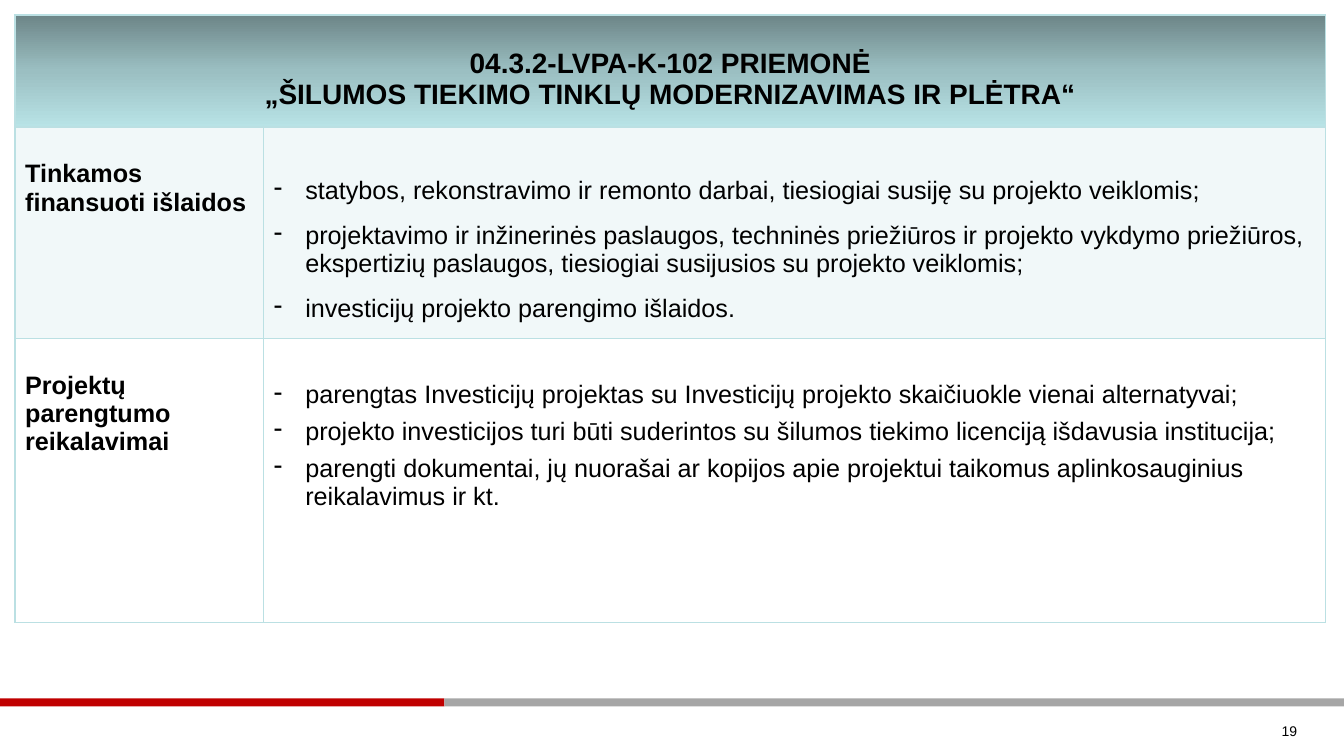
import pptx
import pptx.dml.color
import pptx.enum.shapes
import pptx.enum.text
import pptx.oxml
import pptx.oxml.ns
import pptx.util
from lxml import etree

Cm, Pt = pptx.util.Cm, pptx.util.Pt
RGB = pptx.dml.color.RGBColor.from_string
ALIGN = pptx.enum.text.PP_ALIGN
qn = pptx.oxml.ns.qn

COLORS = {
    "text": "000000",
    "accent": "BBE0E3",
    "red": "C00000",
    "grey": "A6A6A6",
}
HEADER_STOPS = [(0, "6D8688"), (50, "9BBFC2"), (100, "B8E3E6")]

HEADER = ["04.3.2-LVPA-K-102 PRIEMONĖ",
          "„ŠILUMOS TIEKIMO TINKLŲ MODERNIZAVIMAS IR PLĖTRA“"]
# label, items, top margin of the items (cm), gap between items (pt)
SECTIONS = [
    ("Tinkamos finansuoti išlaidos", [
        "statybos, rekonstravimo ir remonto darbai, tiesiogiai susiję su projekto veiklomis;",
        "projektavimo ir inžinerinės paslaugos, techninės priežiūros ir projekto vykdymo "
        "priežiūros, ekspertizių paslaugos, tiesiogiai susijusios su projekto veiklomis;",
        "investicijų projekto parengimo išlaidos.",
    ], 1.25, 12),
    ("Projektų parengtumo reikalavimai", [
        "parengtas Investicijų projektas su Investicijų projekto skaičiuokle vienai alternatyvai;",
        "projekto investicijos turi būti suderintos su šilumos tiekimo licenciją išdavusia "
        "institucija;",
        "parengti dokumentai, jų nuorašai ar kopijos apie projektui taikomus aplinkosauginius "
        "reikalavimus ir kt.",
    ], 1.07, 6),
]


def write(tf, lines, size, bold=False, align=ALIGN.LEFT, gap=0, dash=False):
    """Fill a text frame with one paragraph per line, dashed if asked."""
    tf.text = "\n".join(lines)
    for i, p in enumerate(tf.paragraphs):
        if dash:
            pPr = p._p.get_or_add_pPr()
            pPr.set("marL", str(Cm(0.79)))
            pPr.set("indent", str(-Cm(0.79)))
            etree.SubElement(pPr, qn("a:buChar"), char="-")
        p.alignment = align
        if i and gap:
            p.space_before = Pt(gap)
        for r in p.runs:
            r.font.name = "Arial"
            r.font.size = Pt(size)
            r.font.bold = bold
            r.font.color.rgb = RGB(COLORS["text"])


def add_borders(cell, bottom=1):
    tcPr = cell._tc.get_or_add_tcPr()
    for side, width in (("L", 1), ("R", 1), ("T", 1), ("B", bottom)):
        ln = etree.SubElement(tcPr, qn(f"a:ln{side}"), w=str(Pt(width)))
        fill = etree.SubElement(ln, qn("a:solidFill"))
        etree.SubElement(fill, qn("a:srgbClr"), val=COLORS["accent"])


prs = pptx.Presentation()
prs.slide_width, prs.slide_height = Cm(33.87), Cm(19.05)
s = prs.slides.add_slide(prs.slide_layouts[6])

# Footer bars and page number
for left, width, color in ((0, 11.2, "red"), (11.2, 22.67, "grey")):
    sp = s.shapes.add_shape(pptx.enum.shapes.MSO_SHAPE.RECTANGLE,
                            Cm(left), Cm(17.6), Cm(width), Cm(0.2))
    sp.shadow.inherit = False
    sp.fill.solid()
    sp.fill.fore_color.rgb = RGB(COLORS[color])
    sp.line.fill.background()

tf = s.shapes.add_textbox(Cm(25.04), Cm(17.81), Cm(7.9), Cm(1.24)).text_frame
tf.word_wrap = True
tf.vertical_anchor = pptx.enum.text.MSO_ANCHOR.MIDDLE
write(tf, ["19"], 10, align=ALIGN.RIGHT)

# Table
table = s.shapes.add_table(3, 2, Cm(0.38), Cm(0.38), Cm(33.02), Cm(15.31)).table
table.first_row = table.horz_banding = False
for column, width in zip(table.columns, (6.27, 26.75)):
    column.width = Cm(width)
for row, height in zip(table.rows, (2.82, 5.33, 7.16)):
    row.height = Cm(height)

# Header row
header = table.cell(0, 0)
header.merge(table.cell(0, 1))
header.margin_top = Cm(0.83)
write(header.text_frame, HEADER, 20, bold=True, align=ALIGN.CENTER)
stops = "".join(f'<a:gs pos="{pos * 1000}"><a:srgbClr val="{color}"/></a:gs>'
                for pos, color in HEADER_STOPS)
for cell in table.rows[0].cells:
    add_borders(cell, bottom=2)
    cell._tc.get_or_add_tcPr().append(pptx.oxml.parse_xml(
        f'<a:gradFill {pptx.oxml.ns.nsdecls("a")}><a:gsLst>{stops}</a:gsLst>'
        '<a:lin ang="5400000" scaled="0"/></a:gradFill>'))

# Section rows
for n, (label, items, top, gap) in enumerate(SECTIONS, start=1):
    label_cell, items_cell = table.rows[n].cells
    label_cell.margin_top = Cm(0.83)
    items_cell.margin_top = Cm(top)
    write(label_cell.text_frame, [label], 18, bold=True)
    write(items_cell.text_frame, items, 18, gap=gap, dash=True)
    for cell in (label_cell, items_cell):
        add_borders(cell)
        if n == 1:
            cell.fill.solid()
            cell.fill.fore_color.rgb = RGB(COLORS["accent"])
            tint = cell._tc.tcPr.find(qn("a:solidFill")).find(qn("a:srgbClr"))
            etree.SubElement(tint, qn("a:alpha"), val="20000")
        else:
            cell.fill.background()

prs.save("out.pptx")
